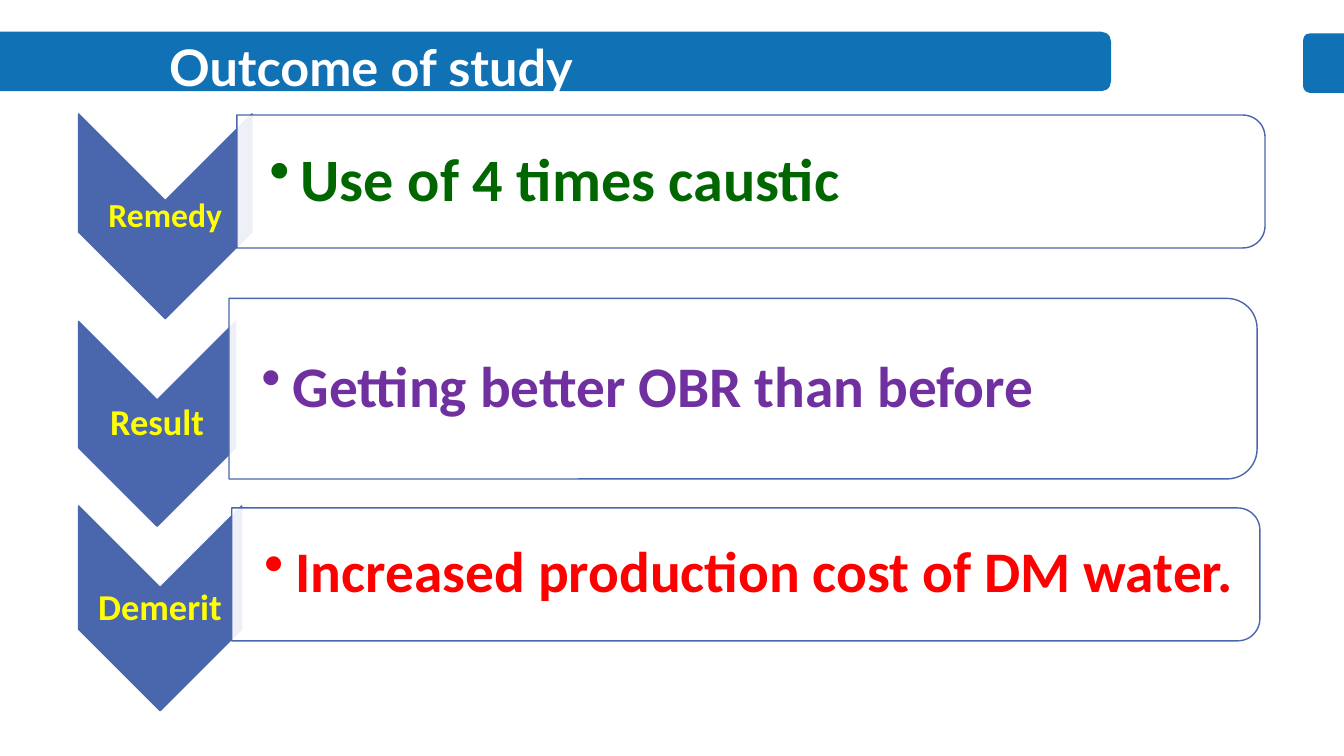
from lxml import etree
from pptx import Presentation
from pptx.dml.color import RGBColor
from pptx.enum import shapes, text
from pptx.oxml.ns import qn
from pptx.util import Cm, Pt

BAR = RGBColor(0x10, 0x71, 0xB4)
BLUE = RGBColor(0x4A, 0x66, 0xAC)
WHITE = RGBColor(0xFF, 0xFF, 0xFF)
YELLOW = RGBColor(0xFF, 0xFF, 0x00)
GREEN = RGBColor(0x00, 0x66, 0x00)
PURPLE = RGBColor(0x70, 0x30, 0xA0)
RED = RGBColor(0xFF, 0x00, 0x00)

ROUND = shapes.MSO_SHAPE.ROUND_2_SAME_RECTANGLE
CHEVRON = shapes.MSO_SHAPE.CHEVRON

# label, size, arrow (left, top, width, height), point, size, colour, panel box
ROWS = [
    ("Remedy", 24, (1.98, 2.87, 4.37, 5.16),
     "Use of 4 times caustic", 43, GREEN, (5.97, 2.9, 25.91, 3.35)),
    ("Result", 26, (1.98, 8.1, 3.96, 5.16),
     "Getting better OBR than before", 41, PURPLE, (5.77, 7.52, 25.91, 4.55)),
    ("Demerit", 26, (1.98, 12.75, 4.11, 5.16),
     "Increased production cost of DM water.", 41, RED, (5.84, 12.8, 25.91, 3.35)),
]


def turned(slide, kind, box, fill, line=None, angle=90):
    """Add a quarter-turned shape that fills the box as seen."""
    left, top, wide, high = box
    shape = slide.shapes.add_shape(
        kind, Cm(left + (wide - high) / 2), Cm(top + (high - wide) / 2),
        Cm(high), Cm(wide))
    shape.rotation = angle
    shape.shadow.inherit = False
    shape.fill.solid()
    shape.fill.fore_color.rgb = fill
    if line is None:
        shape.line.fill.background()
    else:
        shape.line.color.rgb = line
        shape.line.width = Pt(1)
    return shape


def style(para, size, color, face="Calibri"):
    para.font.name = face
    para.font.size = Pt(size)
    para.font.bold = True
    para.font.color.rgb = color


def write(slide, box, words, inset, edge):
    """Add a text box centred in height and return its paragraph."""
    frame = slide.shapes.add_textbox(*map(Cm, box)).text_frame
    frame.word_wrap = True
    frame.vertical_anchor = text.MSO_ANCHOR.MIDDLE
    frame.margin_left = Cm(inset)
    frame.margin_right = frame.margin_top = frame.margin_bottom = Cm(edge)
    para = frame.paragraphs[0]
    para.text = words
    para.line_spacing = 0.9
    return para


def header(slide, box):
    left, top, wide, high = box
    # Bars at both slide edges
    bars = [((left, top, 28, high), 90),
            ((left + 32.84, top + 0.04, wide - 32.84, high), 270)]
    for place, angle in bars:
        turned(slide, ROUND, place, BAR, angle=angle)

    # Title, brought in front of the bars
    title = slide.shapes.title
    title.left, title.top = Cm(left + 4.01), Cm(top - 0.03)
    title.width, title.height = Cm(12.12), Cm(1.8)
    slide.shapes._spTree.append(title._element)
    frame = title.text_frame
    frame.text = "Outcome of study"
    frame.auto_size = text.MSO_AUTO_SIZE.NONE
    frame.vertical_anchor = text.MSO_ANCHOR.MIDDLE
    para = frame.paragraphs[0]
    para.alignment = text.PP_ALIGN.LEFT
    style(para, 36, WHITE, "Lato")


def arrow(slide, box, label, size):
    turned(slide, CHEVRON, box, BLUE, BLUE)
    para = write(slide, box, label, 0.04, 0.04)
    para.alignment = text.PP_ALIGN.CENTER
    style(para, size, YELLOW)


def panel(slide, box, point, size, color):
    shape = turned(slide, ROUND, box, WHITE, BLUE)
    # Slightly see-through fill
    tone = shape._element.spPr.find(qn("a:solidFill"))[0]
    etree.SubElement(tone, qn("a:alpha")).set("val", "90000")

    # Bulleted point with a hanging indent
    para = write(slide, box, point, 0.82, 0.08)
    props = para._p.get_or_add_pPr()
    props.set("marL", str(Cm(0.79)))
    props.set("indent", str(-Cm(0.79)))
    etree.SubElement(props, qn("a:buChar")).set("char", "•")
    style(para, size, color)


def main():
    deck = Presentation()
    deck.slide_width, deck.slide_height = Cm(33.87), Cm(19.05)
    slide = deck.slides.add_slide(deck.slide_layouts[5])
    header(slide, (0, 0.8, 33.87, 1.5))
    for label, small, spot, point, size, color, box in ROWS:
        arrow(slide, spot, label, small)
        panel(slide, box, point, size, color)
    deck.save("out.pptx")


if __name__ == "__main__":
    main()
